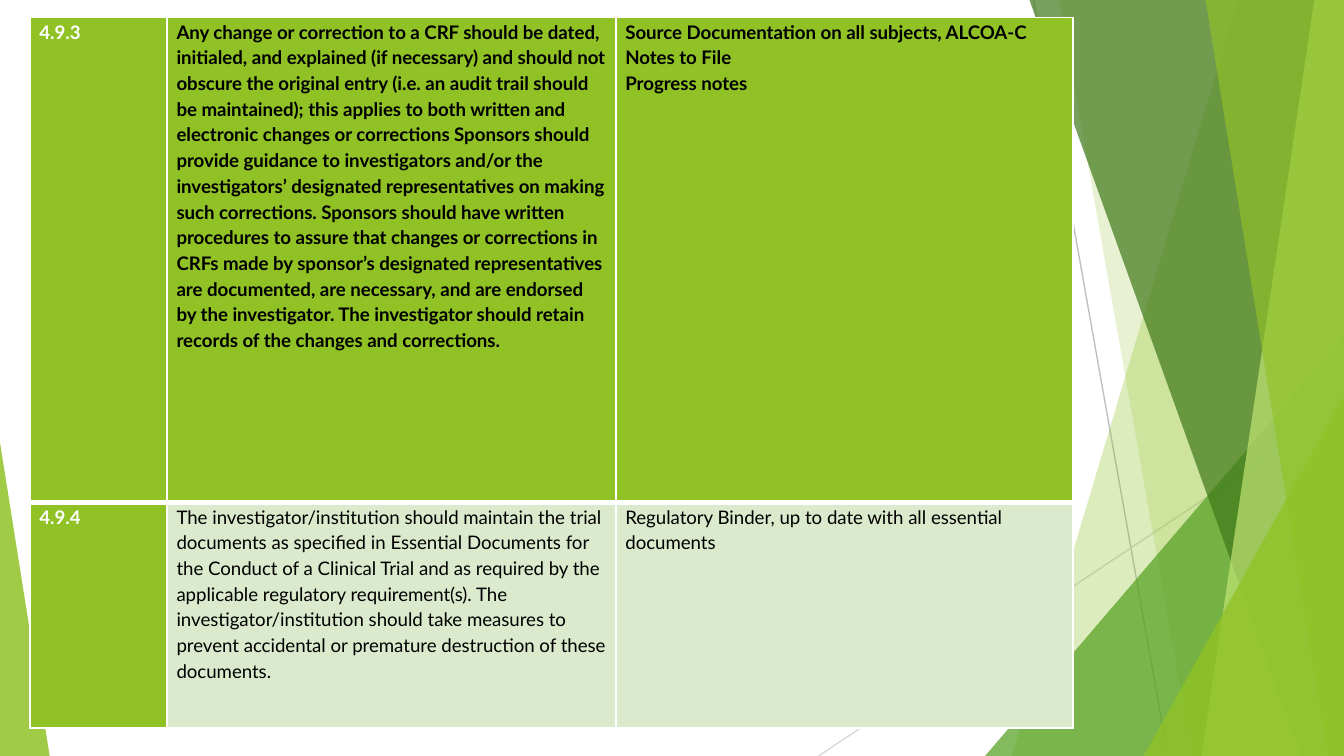
from lxml.etree import SubElement
from pptx import Presentation
from pptx.dml.color import RGBColor
from pptx.enum.shapes import MSO_CONNECTOR, MSO_SHAPE
from pptx.oxml.ns import qn
from pptx.util import Inches, Pt

WIDTH = Inches(10)
HEIGHT = WIDTH * 9 // 16
WHITE, BLACK, LIME, PALE = "FFFFFF", "000000", "90C226", "DBE9CD"
CELL_FORMAT = {"margin_left": Inches(0.07), "margin_right": Inches(0.07),
               "margin_top": 0, "margin_bottom": 0}
COLUMN_WIDTHS = (1.02, 3.34, 3.4)
ROW_HEIGHTS = (3.61, 1.68)

# Back to front, in percent of the slide.
# line: x1, y1, x2, y2, colour
# facet: top x, bottom x, colour, opacity (reaches the right edge)
# wedge: left, top, right, apex position, colour, opacity (reaches the bottom)
BACKDROP = (
    ("line", 76.9, 0, 86.9, 100, "BFBFBF"),
    ("line", 100, 53.7, 60.9, 100, "D9D9D9"),
    ("facet", 92.1, 75.3, LIME, 30),
    ("facet", 78.8, 88.7, LIME, 20),
    ("wedge", 73.3, 44.5, 100, 1, "54A021", 72),
    ("facet", 76.6, 96.8, "3F7819", 70),
    ("facet", 97.8, 89.4, "C0E474", 70),
    ("facet", 89.7, 98.8, LIME, 65),
    ("wedge", 85.1, 52.3, 100, 1, LIME, 80),
    ("wedge", 0, 58.5, 3.7, 0, LIME, 85),
)

GUIDELINES = (
    ("4.9.3",
     "Any change or correction to a CRF should be dated, initialed, and explained "
     "(if necessary) and should not obscure the original entry (i.e. an audit trail "
     "should be maintained); this applies to both written and electronic changes or "
     "corrections Sponsors should provide guidance to investigators and/or the "
     "investigators’ designated representatives on making such corrections. Sponsors "
     "should have written procedures to assure that changes or corrections in CRFs "
     "made by sponsor’s designated representatives are documented, are necessary, and "
     "are endorsed by the investigator. The investigator should retain records of the "
     "changes and corrections.",
     "Source Documentation on all subjects, ALCOA-C\nNotes to File\nProgress notes"),
    ("4.9.4",
     "The investigator/institution should maintain the trial documents as specified in "
     "Essential Documents for the Conduct of a Clinical Trial and as required by the "
     "applicable regulatory requirement(s). The investigator/institution should take "
     "measures to prevent accidental or premature destruction of these documents.",
     "Regulatory Binder, up to date with all essential documents"),
)


def rgb(code):
    return RGBColor.from_string(code)


def share_x(percent):
    return round(WIDTH * percent / 100)


def share_y(percent):
    return round(HEIGHT * percent / 100)


def tint(shape, color, opacity):
    """Fill a shape with a translucent colour, without line or shadow."""
    shape.shadow.inherit = False
    shape.line.fill.background()
    shape.fill.solid()
    shape.fill.fore_color.rgb = rgb(color)
    solid = shape._element.spPr.find(qn("a:solidFill"))
    SubElement(solid[0], qn("a:alpha"), val=str(opacity * 1000))


def add_line(slide, x1, y1, x2, y2, color):
    line = slide.shapes.add_connector(
        MSO_CONNECTOR.STRAIGHT, share_x(x1), share_y(y1), share_x(x2), share_y(y2))
    line.line.color.rgb = rgb(color)
    line.line.width = Pt(0.75)
    SubElement(line._element.spPr, qn("a:effectLst"))


def add_facet(slide, top_x, bottom_x, color, opacity):
    outline = slide.shapes.build_freeform(share_x(top_x), 0)
    outline.add_line_segments(
        [(WIDTH, 0), (WIDTH, HEIGHT), (share_x(bottom_x), HEIGHT)], close=True)
    tint(outline.convert_to_shape(), color, opacity)


def add_wedge(slide, left, top, right, apex, color, opacity):
    wedge = slide.shapes.add_shape(
        MSO_SHAPE.ISOSCELES_TRIANGLE, share_x(left), share_y(top),
        share_x(right - left), share_y(100 - top))
    wedge.adjustments[0] = apex
    tint(wedge, color, opacity)


def add_backdrop(slide):
    draw = {"line": add_line, "facet": add_facet, "wedge": add_wedge}
    for kind, *values in BACKDROP:
        draw[kind](slide, *values)


def add_borders(cell, widths):
    for side, width in widths.items():
        border = SubElement(cell._tc.get_or_add_tcPr(), qn(f"a:ln{side}"), w=str(Pt(width)))
        SubElement(SubElement(border, qn("a:solidFill")), qn("a:srgbClr"), val=WHITE)


def fill_cell(cell, text, fill, font_format, color):
    for name, value in CELL_FORMAT.items():
        setattr(cell, name, value)
    cell.fill.solid()
    cell.fill.fore_color.rgb = rgb(fill)
    cell.text_frame.text = text
    for paragraph in cell.text_frame.paragraphs:
        paragraph.line_spacing = 1.15
        for run in paragraph.runs:
            for name, value in font_format.items():
                setattr(run.font, name, value)
            run.font.color.rgb = rgb(color)


def add_guideline_table(slide, left, top, width, height):
    table = slide.shapes.add_table(
        len(ROW_HEIGHTS), len(COLUMN_WIDTHS), left, top, width, height).table
    for column, share in zip(table.columns, COLUMN_WIDTHS):
        column.width = round(width * share / sum(COLUMN_WIDTHS))
    for row, share in zip(table.rows, ROW_HEIGHTS):
        row.height = round(height * share / sum(ROW_HEIGHTS))
    for r, guideline in enumerate(GUIDELINES):
        heading = r == 0
        for c, text in enumerate(guideline):
            number = c == 0
            cell = table.cell(r, c)
            add_borders(cell, {"L": 1, "R": 1, "T": 1 if heading else 3,
                               "B": 3 if heading else 1})
            font_format = {"name": "Lato", "size": Pt(10), "bold": heading or number}
            fill_cell(cell, text, LIME if heading or number else PALE,
                      font_format, WHITE if number else BLACK)


def main():
    deck = Presentation()
    deck.slide_width, deck.slide_height = WIDTH, HEIGHT
    slide = deck.slides.add_slide(deck.slide_layouts[6])
    add_backdrop(slide)
    add_guideline_table(slide, share_x(2.24), share_y(2.3), share_x(77.6), share_y(94))
    deck.save("out.pptx")


if __name__ == "__main__":
    main()
